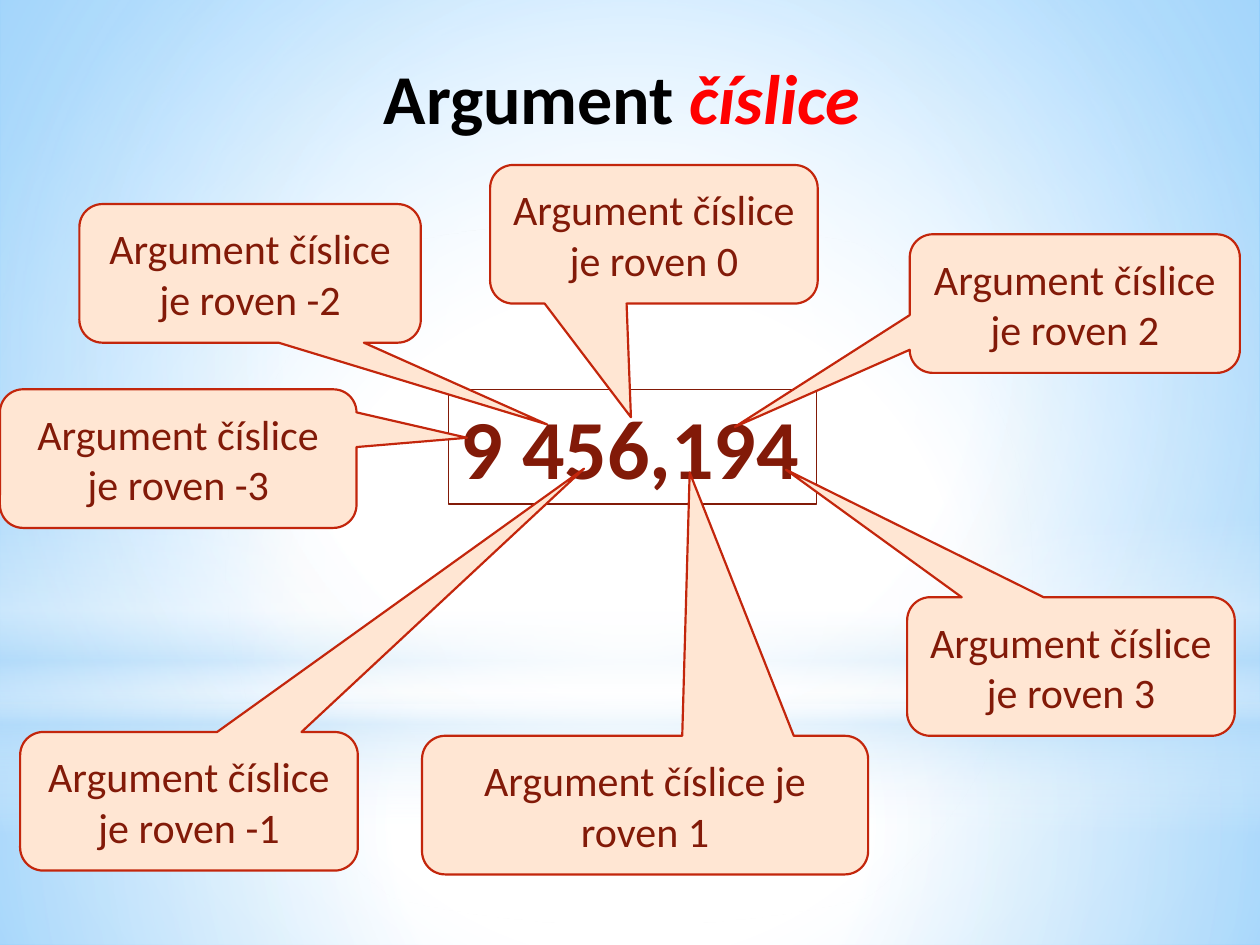
from dataclasses import dataclass
from typing import Optional

from lxml import etree
from pptx import Presentation
from pptx.dml.color import RGBColor
from pptx.enum.shapes import MSO_SHAPE
from pptx.enum.text import MSO_ANCHOR, MSO_AUTO_SIZE, PP_ALIGN
from pptx.oxml import parse_xml
from pptx.oxml.ns import nsdecls, qn
from pptx.util import Inches, Pt

RECTANGLE = MSO_SHAPE.RECTANGLE
OVAL = MSO_SHAPE.OVAL
CALLOUT_SHAPE = MSO_SHAPE.ROUNDED_RECTANGULAR_CALLOUT
CENTER = PP_ALIGN.CENTER
TOP, MIDDLE = MSO_ANCHOR.TOP, MSO_ANCHOR.MIDDLE
GROW = MSO_AUTO_SIZE.SHAPE_TO_FIT_TEXT

BLACK = RGBColor(0x00, 0x00, 0x00)
RED = RGBColor(0xFF, 0x00, 0x00)
WHITE = RGBColor(0xFF, 0xFF, 0xFF)
SKY = RGBColor(0x63, 0xBC, 0xFF)
PALE_BLUE = RGBColor(0xB4, 0xDC, 0xFA)
BROWN = RGBColor(0x82, 0x1A, 0x08)
PEACH = RGBColor(0xFF, 0xE6, 0xD3)
RUST = RGBColor(0xC3, 0x26, 0x0C)

FONT = "Calibri"
CALLOUT_HEIGHT = 1.1
CENTERED = (50, 50, 50, 50)


@dataclass(frozen=True)
class Stop:
    position: int
    color: RGBColor
    opacity: int = 100


@dataclass(frozen=True)
class Gradient:
    """A circular gradient around a focus, or a downward one without focus."""
    stops: tuple[Stop, ...]
    focus: Optional[tuple[int, int, int, int]] = CENTERED


@dataclass(frozen=True)
class Glow:
    shape_type: int
    top: float
    height: float
    gradient: Gradient


@dataclass(frozen=True)
class Callout:
    """A bubble whose tip is given as a share of its size from its centre."""
    digits: int
    left: float
    top: float
    width: float
    tip_x: float
    tip_y: float


BACKDROP = Gradient((Stop(0, WHITE), Stop(42, WHITE), Stop(100, SKY)), (24, 44, 24, 12))

GLOWS = (
    Glow(RECTANGLE, 5.58, 1.92, Gradient(
        (Stop(0, WHITE, 91), Stop(37, WHITE, 76), Stop(100, PALE_BLUE, 79)))),
    Glow(RECTANGLE, 0, 5.58, Gradient(
        (Stop(0, WHITE, 89), Stop(48, WHITE, 62), Stop(100, PALE_BLUE, 79)))),
    Glow(RECTANGLE, 4.12, 2.5, Gradient(
        (Stop(0, WHITE, 0), Stop(29, WHITE, 30), Stop(45, PALE_BLUE, 40),
         Stop(55, WHITE, 26), Stop(65, PALE_BLUE, 60), Stop(100, WHITE, 0)), None)),
    Glow(OVAL, 1.75, 5.58, Gradient((Stop(0, WHITE), Stop(56, WHITE, 0)))),
)

CALLOUTS = (
    Callout(-3, 0, 3.09, 2.83, 0.81, -0.15),
    Callout(-2, 0.63, 1.62, 2.71, 0.87, 1.09),
    Callout(3, 7.2, 4.74, 2.6, -0.87, -1.42),
    Callout(1, 3.35, 5.84, 3.54, 0.1, -2.4),
    Callout(0, 3.89, 1.31, 2.6, -0.07, 1.32),
    Callout(-1, 0.16, 5.81, 2.68, 1.17, -2.4),
    Callout(2, 7.22, 1.86, 2.62, -1.03, 0.89),
)


def apply_gradient(owner: etree._Element, gradient: Gradient) -> None:
    """Put the gradient in place of the owner's first solid fill."""
    stops = "".join(
        f'<a:gs pos="{stop.position * 1000}"><a:srgbClr val="{stop.color}">'
        f'<a:alpha val="{stop.opacity * 1000}"/></a:srgbClr></a:gs>'
        for stop in gradient.stops)
    if gradient.focus is None:
        direction = '<a:lin ang="5400000" scaled="0"/>'
    else:
        sides = " ".join(f'{side}="{share * 1000}"'
                         for side, share in zip("ltrb", gradient.focus))
        direction = f'<a:path path="circle"><a:fillToRect {sides}/></a:path>'
    fill = parse_xml(f'<a:gradFill {nsdecls("a")} rotWithShape="1">'
                     f'<a:gsLst>{stops}</a:gsLst>{direction}</a:gradFill>')
    solid = next(owner.iter(qn("a:solidFill")))
    solid.getparent().replace(solid, fill)


def draw_glow(slide, glow: Glow) -> None:
    shape = slide.shapes.add_shape(
        glow.shape_type, 0, Inches(glow.top), Inches(10), Inches(glow.height))
    shape.shadow.inherit = False
    shape.line.fill.background()
    shape.fill.solid()
    apply_gradient(shape.element, glow.gradient)


def format_title(slide) -> None:
    title = slide.shapes.title
    slide.shapes.element.append(title.element)  # in front of the glows
    title.left, title.top = 0, Inches(0.38)
    title.width, title.height = Inches(10), Inches(0.77)
    frame = title.text_frame
    frame.vertical_anchor = TOP
    frame.auto_size = GROW
    para = frame.paragraphs[0]
    para.alignment = CENTER
    para.font.name, para.font.size, para.font.bold = FONT, Pt(40), True
    for text, color, italic in (("Argument ", BLACK, False), ("číslice ", RED, True)):
        span = para.add_run()
        span.text = text
        span.font.color.rgb = color
        span.font.italic = italic


def draw_number(slide) -> None:
    box = slide.shapes.add_textbox(Inches(3.56), Inches(3.09), Inches(2.92), Inches(0.91))
    box.line.color.rgb = BROWN
    box.line.width = Pt(0.75)
    frame = box.text_frame
    frame.word_wrap = False
    frame.auto_size = GROW
    para = frame.paragraphs[0]
    para.text = "9 456,194"
    para.font.name, para.font.size, para.font.bold = FONT, Pt(48), True
    para.font.color.rgb = BROWN


def draw_callout(slide, callout: Callout) -> None:
    bubble = slide.shapes.add_shape(
        CALLOUT_SHAPE, Inches(callout.left), Inches(callout.top),
        Inches(callout.width), Inches(CALLOUT_HEIGHT))
    bubble.adjustments[0] = callout.tip_x
    bubble.adjustments[1] = callout.tip_y
    bubble.shadow.inherit = False
    bubble.fill.solid()
    bubble.fill.fore_color.rgb = PEACH
    bubble.line.color.rgb = RUST
    bubble.line.width = Pt(1.25)
    frame = bubble.text_frame
    frame.word_wrap = True
    frame.vertical_anchor = MIDDLE
    para = frame.paragraphs[0]
    para.text = f"Argument číslice je roven {callout.digits}"
    para.alignment = CENTER
    para.font.name, para.font.size = FONT, Pt(24)
    para.font.color.rgb = BROWN


def main() -> None:
    deck = Presentation()
    deck.slide_width, deck.slide_height = Inches(10), Inches(7.5)
    slide = deck.slides.add_slide(deck.slide_layouts.get_by_name("Title Only"))
    slide.background.fill.solid()
    apply_gradient(slide.element, BACKDROP)
    for glow in GLOWS:
        draw_glow(slide, glow)
    format_title(slide)
    draw_number(slide)
    for callout in CALLOUTS:
        draw_callout(slide, callout)
    deck.save("out.pptx")


if __name__ == "__main__":
    main()
